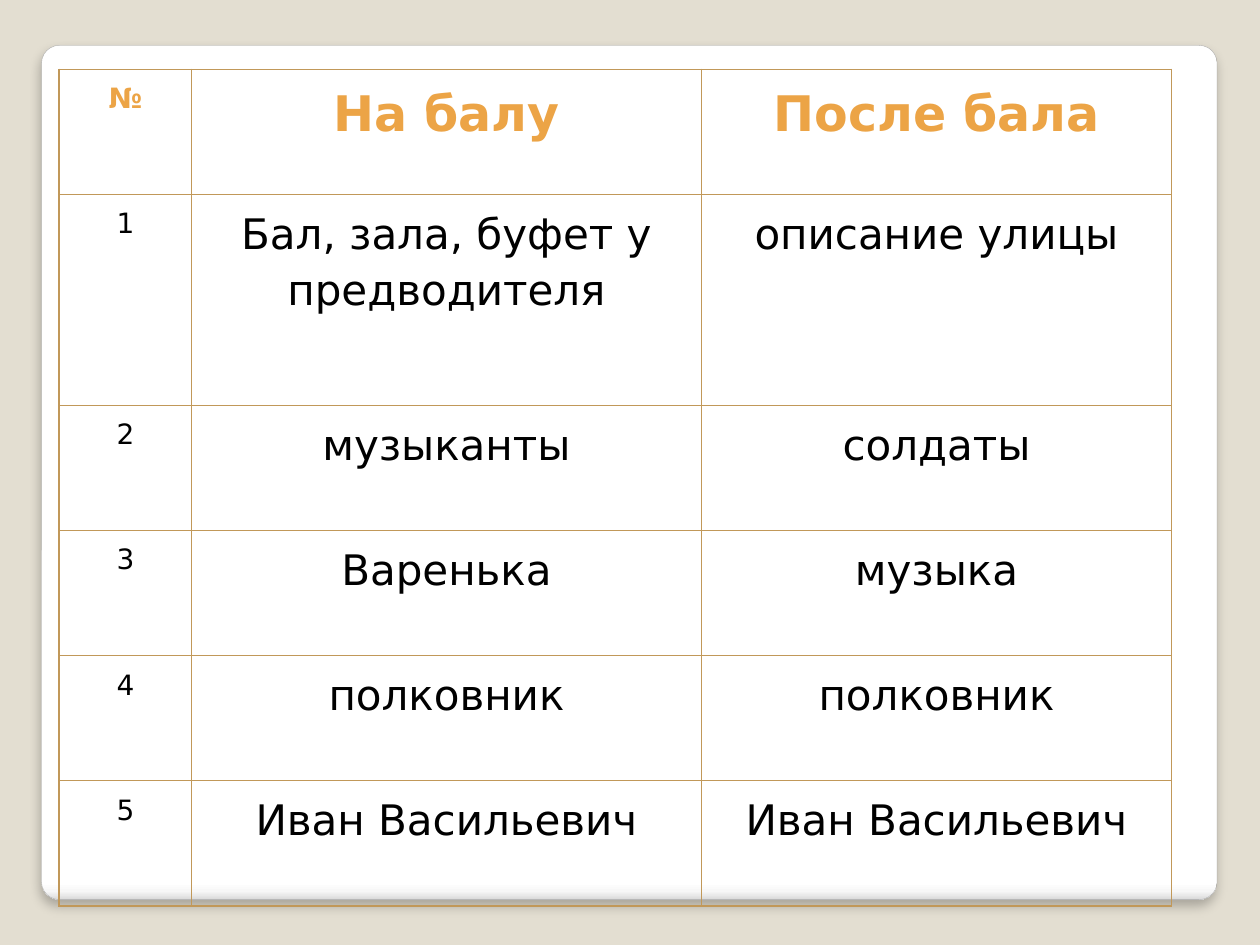
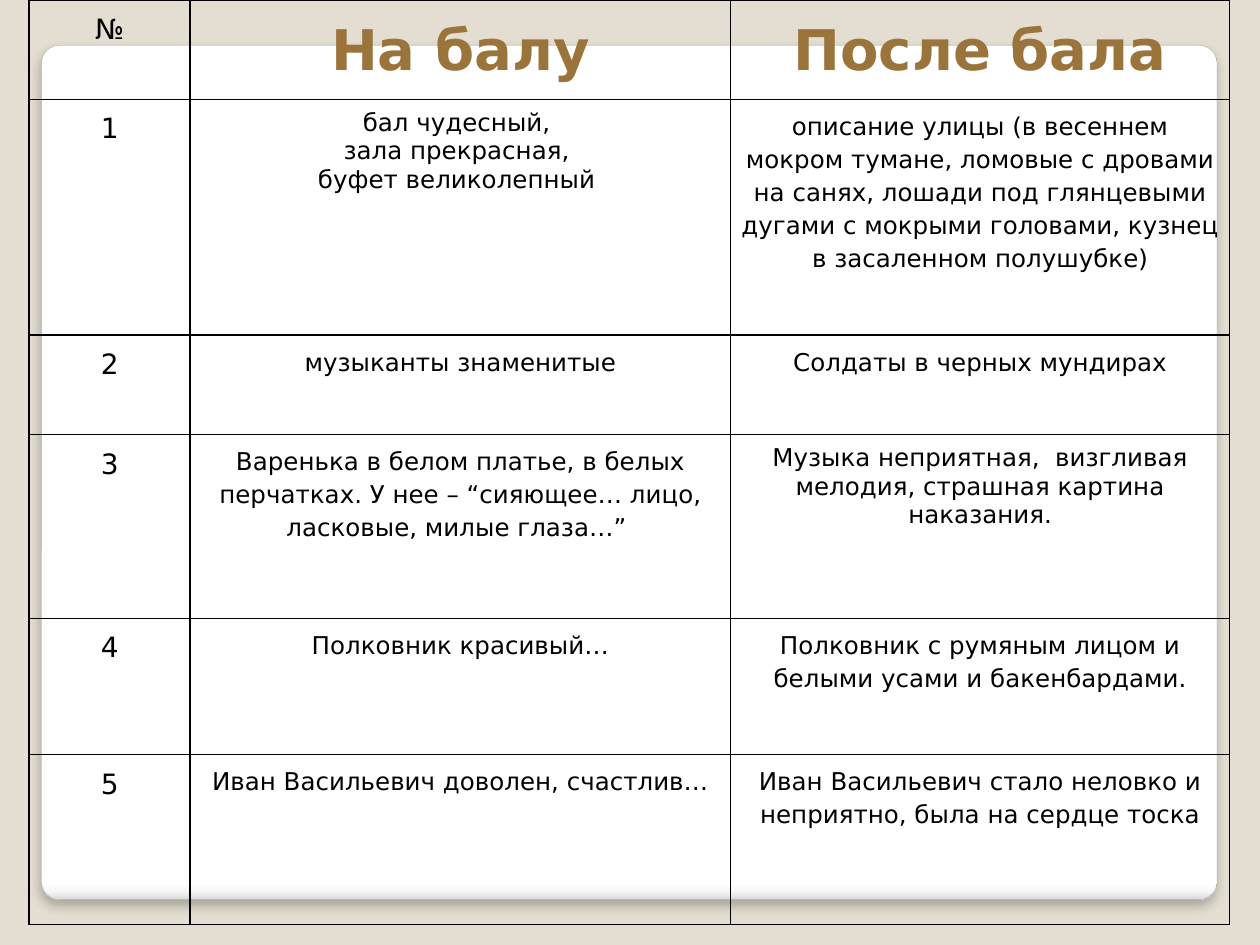
import pptx
import pptx.dml.color
import pptx.enum.shapes
import pptx.enum.text
import pptx.oxml
import pptx.oxml.ns
import pptx.util
from dataclasses import dataclass
from typing import Sequence

SLIDE_W, SLIDE_H = 10, 7.5
FONT = "DejaVu Sans"
BACKGROUND, BLACK = "E3DED1", "000000"
CARD_BOX = (0.33, 0.36, 9.33, 6.78)
CARD_STOPS = ((0, "FFFFFF"), (98, "FFFFFF"), (99, "F7F7F7"), (100, "DADADA"))
CARD_LINE = "A4A4A4"
CELL_INSET = 0.07
NUMBER_SIZE = 16
HEADINGS = ("№", "На балу", "После бала")
NS = pptx.oxml.ns.nsdecls("a")


@dataclass(frozen=True)
class Tight:
    """Cell text set in single-spaced paragraphs."""
    lines: Sequence[str]


@dataclass(frozen=True)
class TextStyle:
    size: float
    color: str = BLACK
    bold: bool = False


@dataclass(frozen=True)
class Comparison:
    """A table; column and row weights divide its box."""
    box: tuple[float, float, float, float]
    columns: Sequence[float]
    rows: Sequence[float]
    border: str
    number_heading: TextStyle
    heading: TextStyle
    body: TextStyle
    pairs: Sequence[tuple[str | Tight, str | Tight]]


COMPARISONS = (
    Comparison(
        box=(0.47, 0.55, 8.83, 6.64),
        columns=(1.05, 4.04, 3.73),
        rows=(0.99, 1.67, 0.99, 0.99, 0.99, 0.99),
        border="C19859",
        number_heading=TextStyle(NUMBER_SIZE, "ECA446", True),
        heading=TextStyle(28, "ECA446", True),
        body=TextStyle(24),
        pairs=(
            ("Бал, зала, буфет у предводителя", "описание улицы"),
            ("музыканты", "солдаты"),
            ("Варенька", "музыка"),
            ("полковник", "полковник"),
            ("Иван Васильевич", "Иван Васильевич"),
        ),
    ),
    Comparison(
        box=(0.23, 0, 9.53, 7.34),
        columns=(1.28, 4.29, 3.96),
        rows=(0.79, 1.87, 0.79, 1.46, 1.08, 1.35),
        border=BLACK,
        number_heading=TextStyle(NUMBER_SIZE),
        heading=TextStyle(32, "9A743A", True),
        body=TextStyle(14),
        pairs=(
            (Tight(("бал чудесный, ", "зала прекрасная, ", "буфет великолепный ")),
             "описание улицы (в весеннем мокром тумане, ломовые с дровами на санях, "
             "лошади под глянцевыми дугами с мокрыми головами, кузнец в засаленном "
             "полушубке)"),
            ("музыканты знаменитые", "Солдаты в черных мундирах"),
            ("Варенька в белом платье, в белых перчатках. У нее – “сияющее… лицо, "
             "ласковые, милые глаза…” ",
             Tight(("Музыка неприятная,  визгливая мелодия, страшная картина "
                    "наказания.",))),
            ("Полковник красивый…",
             "Полковник с румяным лицом и белыми усами и бакенбардами."),
            ("Иван Васильевич доволен, счастлив…",
             "Иван Васильевич стало неловко и неприятно, была на сердце тоска"),
        ),
    ),
)


def rgb(value: str) -> pptx.dml.color.RGBColor:
    return pptx.dml.color.RGBColor.from_string(value)


def inches(lengths: Sequence[float]) -> list[int]:
    return [pptx.util.Inches(length) for length in lengths]


def add_card(slide) -> None:
    """Rounded white card with a shaded lower edge and a soft shadow."""
    sp = slide.shapes.add_shape(
        pptx.enum.shapes.MSO_SHAPE.ROUNDED_RECTANGLE, *inches(CARD_BOX))
    sp.adjustments[0] = 0.021
    sp.shadow.inherit = False
    sp.line.color.rgb = rgb(CARD_LINE)
    sp.line.width = pptx.util.Pt(0.16)
    sp.fill.gradient()
    gradient = sp.fill._fill._gradFill
    stops = "".join(
        f'<a:gs pos="{share * 1000}"><a:srgbClr val="{color}"/></a:gs>'
        for share, color in CARD_STOPS)
    gradient.getparent().replace(gradient, pptx.oxml.parse_xml(
        f'<a:gradFill {NS} rotWithShape="1"><a:gsLst>{stops}</a:gsLst>'
        '<a:lin ang="5400000" scaled="0"/></a:gradFill>'))
    effects = sp._element.spPr.find(pptx.oxml.ns.qn("a:effectLst"))
    effects.append(pptx.oxml.parse_xml(
        f'<a:outerShdw {NS} blurRad="{pptx.util.Pt(6)}" dist="{pptx.util.Pt(4)}" '
        'dir="5400000" algn="t" rotWithShape="0"><a:srgbClr val="000000">'
        '<a:alpha val="25000"/></a:srgbClr></a:outerShdw>'))


def set_borders(cell, color: str) -> None:
    properties = cell._tc.get_or_add_tcPr()
    for side in "LRTB":
        properties.append(pptx.oxml.parse_xml(
            f'<a:ln{side} {NS} w="{pptx.util.Pt(1)}"><a:solidFill>'
            f'<a:srgbClr val="{color}"/></a:solidFill></a:ln{side}>'))


def fill_cell(cell, content: str | Tight, style: TextStyle, border: str) -> None:
    set_borders(cell, border)
    cell.fill.background()
    cell.margin_left = cell.margin_right = pptx.util.Inches(CELL_INSET)
    cell.margin_top = cell.margin_bottom = pptx.util.Inches(CELL_INSET)
    tight = isinstance(content, Tight)
    tf = cell.text_frame
    tf.text = "\n".join(content.lines) if tight else content
    for p in tf.paragraphs:
        p.alignment = pptx.enum.text.PP_ALIGN.CENTER
        if not tight:
            p.line_spacing = 1.15
            p.space_after = pptx.util.Pt(10)
        for r in p.runs:
            r.font.name = FONT
            r.font.size = pptx.util.Pt(style.size)
            r.font.bold = style.bold
            r.font.color.rgb = rgb(style.color)


def divide(tracks, weights: Sequence[float], length: float, side: str) -> None:
    """Share a length among table columns or rows."""
    for track, weight in zip(tracks, weights):
        setattr(track, side, pptx.util.Inches(length * weight / sum(weights)))


def add_comparison(slide, data: Comparison) -> None:
    table = slide.shapes.add_table(
        len(data.rows), len(data.columns), *inches(data.box)).table
    table.first_row = table.horz_banding = False
    divide(table.columns, data.columns, data.box[2], "width")
    divide(table.rows, data.rows, data.box[3], "height")

    # Headings, then numbered pairs
    lines = [HEADINGS] + [(str(n), *pair) for n, pair in enumerate(data.pairs, 1)]
    number = TextStyle(NUMBER_SIZE)
    for row, line in enumerate(lines):
        first, rest = (number, data.body) if row else (data.number_heading, data.heading)
        for column, content in enumerate(line):
            fill_cell(table.cell(row, column), content,
                      rest if column else first, data.border)


def main() -> None:
    prs = pptx.Presentation()
    prs.slide_width, prs.slide_height = inches((SLIDE_W, SLIDE_H))
    for data in COMPARISONS:
        slide = prs.slides.add_slide(prs.slide_layouts[6])
        slide.background.fill.solid()
        slide.background.fill.fore_color.rgb = rgb(BACKGROUND)
        add_card(slide)
        add_comparison(slide, data)
    prs.save("out.pptx")


if __name__ == "__main__":
    main()
